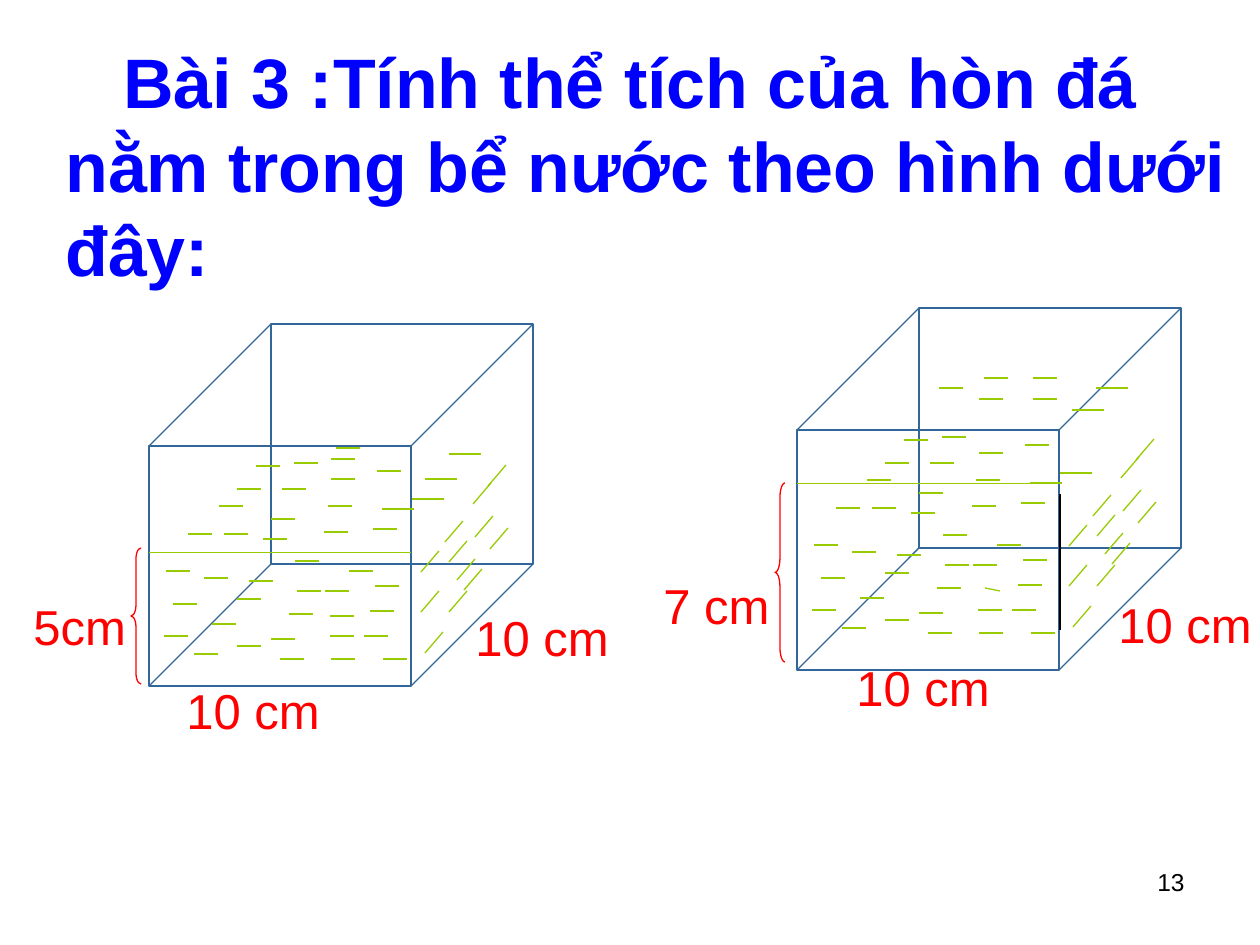
from lxml import etree
from pptx import Presentation
from pptx.dml.color import RGBColor
from pptx.enum.shapes import MSO_CONNECTOR, MSO_SHAPE
from pptx.enum.text import PP_ALIGN
from pptx.oxml.ns import qn
from pptx.util import Pt

PX = 914400 / 126
STRAIGHT = MSO_CONNECTOR.STRAIGHT
RECTANGLE, LEFT_BRACE = MSO_SHAPE.RECTANGLE, MSO_SHAPE.LEFT_BRACE
LEFT, RIGHT = PP_ALIGN.LEFT, PP_ALIGN.RIGHT
COLORS = {"title": "0000FF", "label": "FF0000", "water": "99CC00",
          "edge": "336699", "ink": "000000"}

# Water strokes common to both tanks, as start points in the left tank
SHORT_STROKES = [
    (204, 578), (166, 571), (249, 581), (237, 599), (173, 604), (212, 624),
    (271, 639), (237, 646), (194, 654), (164, 636), (289, 614), (297, 591),
    (295, 561), (325, 591), (349, 571), (330, 636), (331, 659), (280, 659),
    (383, 659), (364, 636), (370, 611), (375, 586), (188, 534), (224, 534),
    (263, 539), (328, 506), (324, 532), (373, 529), (271, 519), (282, 489),
    (331, 479), (377, 471), (294, 463), (219, 506), (237, 489), (256, 466),
]
LONG_STROKES = [(382, 509), (412, 499)]
SLANTED_STROKES = [
    (421, 572), (445, 542), (473, 504), (488, 486), (421, 612), (449, 562),
    (475, 537), (457, 580), (490, 549), (425, 653), (464, 590), (449, 612),
]
STROKE_GROUPS = [(SHORT_STROKES, 24, 0), (LONG_STROKES, 32, 0),
                 (SLANTED_STROKES, 18, -21)]
FRONT_WIDTH, FRONT_HEIGHT, DEPTH = 262, 240, 122

# shift moves the common strokes; extra strokes are (x, y, dx, dy)
TANKS = [
    {"corner": (149, 446), "shift": (0, 0), "level": 552,
     "brace": (131, 548, 10, 136, 1.08),
     "extra": [(330, 616, 24, 0), (331, 459, 24, 0), (336, 448, 24, 0),
               (425, 479, 32, 0), (449, 454, 32, 0)],
     "labels": [("5cm", 21, 590, 118), ("10 cm", 463, 601, 159),
                ("10 cm", 174, 674, 159)]},
    {"corner": (797, 430), "shift": (648, -26), "level": 483,
     "brace": (775, 483, 10, 179, 1.42),
     "extra": [(985, 588, 15, 3), (979, 399, 24, 0), (984, 378, 24, 0),
               (939, 388, 24, 0), (1033, 378, 24, 0), (1033, 399, 24, 0),
               (1072, 410, 32, 0), (1096, 388, 32, 0)],
     "labels": [("7 cm", 651, 569, 132), ("10 cm", 1106, 588, 159),
                ("10 cm", 844, 651, 159)]},
]

deck = Presentation()
deck.slide_width, deck.slide_height = round(1260 * PX), round(945 * PX)
page = deck.slides.add_slide(deck.slide_layouts[6])


def add_line(x, y, dx, dy, color="water", width=0.75):
    ends = [round(value * PX) for value in (x, y, x + dx, y + dy)]
    line = page.shapes.add_connector(STRAIGHT, *ends)
    line.line.color.rgb = RGBColor.from_string(COLORS[color])
    line.line.width = Pt(width)
    etree.SubElement(line._element.spPr, qn("a:effectLst"))


def add_text(text, frame, size, color, align=LEFT, wrap=True, bold=False):
    box = page.shapes.add_textbox(*[round(value * PX) for value in frame])
    box.text_frame.word_wrap = wrap
    para = box.text_frame.paragraphs[0]
    para.alignment = align
    span = para.add_run()
    span.text = text
    span.font.name, span.font.size, span.font.bold = "Arial", Pt(size), bold
    span.font.color.rgb = RGBColor.from_string(COLORS[color])
    return para


add_text("13", (903, 861, 294, 65), 14, "ink", align=RIGHT)

for tank in TANKS:
    x, y = tank["corner"]
    front = (x, y, FRONT_WIDTH, FRONT_HEIGHT)
    back = (x + DEPTH, y - DEPTH, FRONT_WIDTH, FRONT_HEIGHT)
    *brace, curve = tank["brace"]
    outlines = [(RECTANGLE, back, "edge"), (RECTANGLE, front, "edge"),
                (LEFT_BRACE, brace, "label")]
    for kind, frame, color in outlines:
        shape = page.shapes.add_shape(kind, *[round(value * PX) for value in frame])
        shape.shadow.inherit = False
        shape.fill.background()
        shape.line.color.rgb = RGBColor.from_string(COLORS[color])
        shape.line.width = Pt(0.75)
        if kind == LEFT_BRACE:
            shape.adjustments[0] = curve
    for corner_x in (x, x + FRONT_WIDTH):
        for corner_y in (y, y + FRONT_HEIGHT):
            add_line(corner_x, corner_y, DEPTH, -DEPTH, "edge")

    add_line(x, tank["level"], FRONT_WIDTH, 0, width=0.25)
    shift_x, shift_y = tank["shift"]
    for starts, dx, dy in STROKE_GROUPS:
        for start_x, start_y in starts:
            add_line(start_x + shift_x, start_y + shift_y, dx, dy)
    for stroke in tank["extra"]:
        add_line(*stroke)
    for text, left, top, width in tank["labels"]:
        add_text(text, (left, top, width, 72), 28, "label", wrap=False)

add_line(1060, 494, 0, 136, "ink")

title = add_text("Bài 3 :Tính thể tích của hòn đá nằm trong bể nước theo hình dưới đây:",
                 (53, 32, 1207, 265), 40, "title", bold=True)
title_format = title._p.get_or_add_pPr()
title_format.set("marL", "0")
title_format.set("indent", str(round(58 * PX)))

deck.save("out.pptx")
